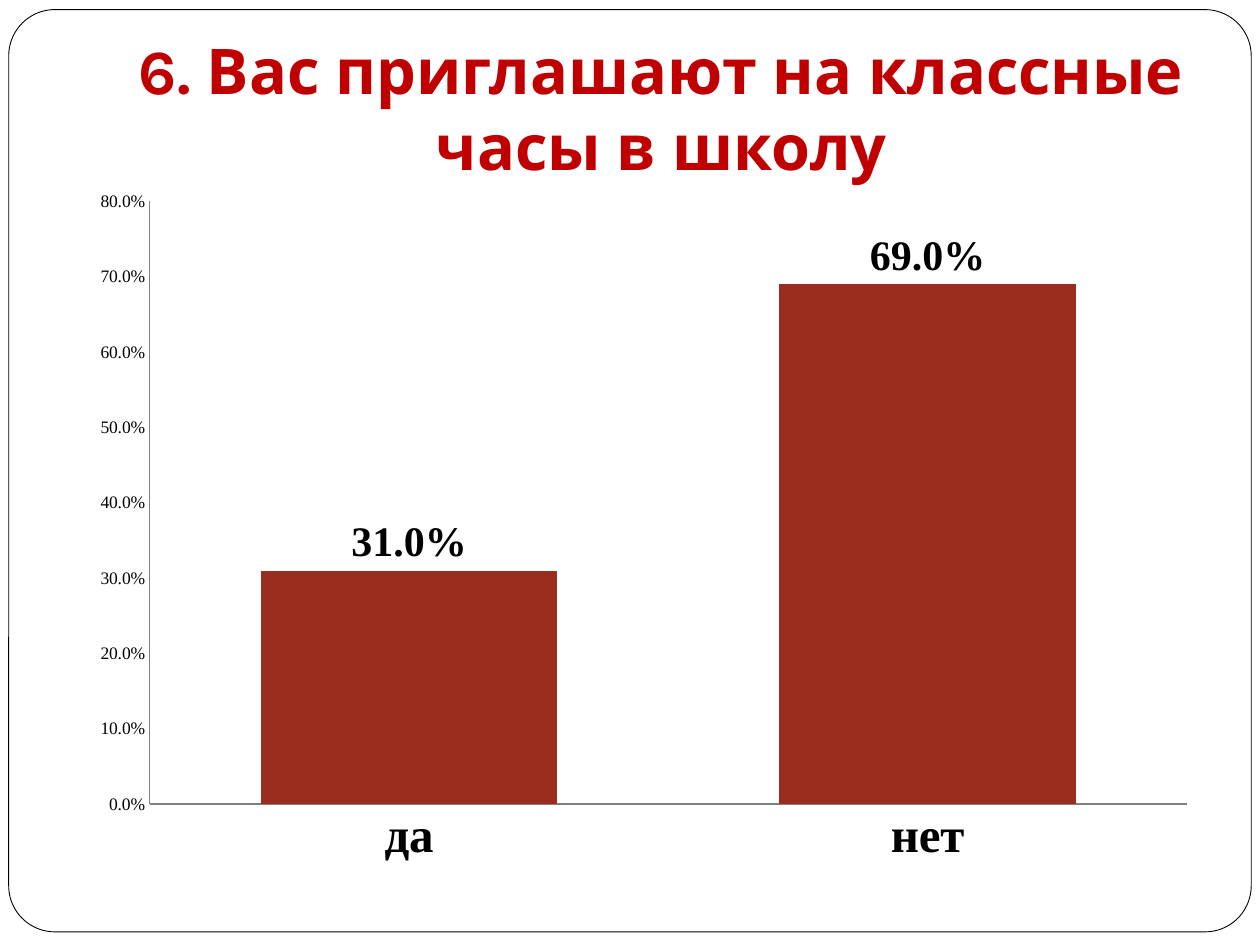
from dataclasses import dataclass

from pptx import Presentation
from pptx.chart.data import CategoryChartData
from pptx.dml.color import RGBColor as RGB
from pptx.enum.chart import XL_CHART_TYPE as CT, XL_LABEL_POSITION as LP, XL_TICK_MARK as TM
from pptx.enum.shapes import MSO_SHAPE as SHAPE
from pptx.enum.text import MSO_ANCHOR as ANCHOR, PP_ALIGN as ALIGN
from pptx.util import Pt


@dataclass(frozen=True)
class Theme:
    paper: RGB = RGB(0xFF, 0xFF, 0xFF)
    ink: RGB = RGB(0, 0, 0)
    title: RGB = RGB(0xC0, 0, 0)
    bar: RGB = RGB(0x9B, 0x2D, 0x1F)
    axis: RGB = RGB(0x80, 0x80, 0x80)
    title_font: str = "Karla"
    chart_font: str = "Times New Roman"
    title_size: int = 36
    category_size: int = 28
    label_size: int = 24
    scale_size: int = 10


class SlideBuilder:
    def __init__(self, s, theme):
        self.s = s
        self.theme = theme

    def frame(self, *box):
        sp = self.s.shapes.add_shape(SHAPE.ROUNDED_RECTANGLE, *map(Pt, box))
        sp.adjustments[0] = 0.05
        sp.shadow.inherit = False
        sp.fill.solid()
        sp.fill.fore_color.rgb = self.theme.paper
        sp.line.color.rgb = self.theme.ink
        sp.line.width = Pt(0.5)

    def title(self, text, *box):
        tf = self.s.shapes.add_textbox(*map(Pt, box)).text_frame
        tf.word_wrap = True
        tf.vertical_anchor = ANCHOR.BOTTOM
        tf.margin_bottom = Pt(7.2)
        p = tf.paragraphs[0]
        p.text = text
        p.alignment = ALIGN.CENTER
        self.style(p.font, self.theme.title_size, self.theme.title, self.theme.title_font, True)

    def style(self, font, size, color, name, bold=False):
        font.size = Pt(size)
        font.color.rgb = color
        font.name = name
        font.bold = bold

    def chart_style(self, font, size, bold=False):
        self.style(font, size, self.theme.ink, self.theme.chart_font, bold)

    def percent_columns(self, cats, vals, *box):
        t = self.theme
        data = CategoryChartData(number_format="0.0%")
        data.categories = cats
        data.add_series("Series 1", vals)
        chart = self.s.shapes.add_chart(CT.COLUMN_CLUSTERED, *map(Pt, box), data).chart
        chart.has_legend = False
        chart.has_title = False
        self.chart_style(chart.font, t.scale_size)

        for axis in (chart.category_axis, chart.value_axis):
            axis.has_major_gridlines = False
            axis.major_tick_mark = axis.minor_tick_mark = TM.NONE
            axis.format.line.color.rgb = t.axis
            axis.format.line.width = Pt(0.75)
        self.chart_style(chart.category_axis.tick_labels.font, t.category_size, True)
        scale = chart.value_axis
        scale.minimum_scale, scale.maximum_scale, scale.major_unit = 0, 0.8, 0.1
        scale.tick_labels.number_format = "0.0%"
        scale.tick_labels.number_format_is_linked = False

        plot = chart.plots[0]
        plot.gap_width = 75
        plot.vary_by_categories = False
        fill = plot.series[0].format.fill
        fill.solid()
        fill.fore_color.rgb = t.bar
        plot.has_data_labels = True
        labels = plot.data_labels
        labels.show_value = True
        labels.number_format = "0.0%"
        labels.number_format_is_linked = False
        labels.position = LP.OUTSIDE_END
        self.chart_style(labels.font, t.label_size, True)


def main():
    prs = Presentation()
    prs.slide_width, prs.slide_height = Pt(720), Pt(540)
    slide = SlideBuilder(prs.slides.add_slide(prs.slide_layouts[6]), Theme())
    slide.frame(5, 5.5, 710, 527)
    slide.title("6. Вас приглашают на классные часы в школу", 72, 21.6, 612, 90)
    slide.percent_columns(("да", "нет"), (0.31, 0.69), 44.6, 101.5, 646.6, 399.6)
    prs.save("out.pptx")


if __name__ == "__main__":
    main()
